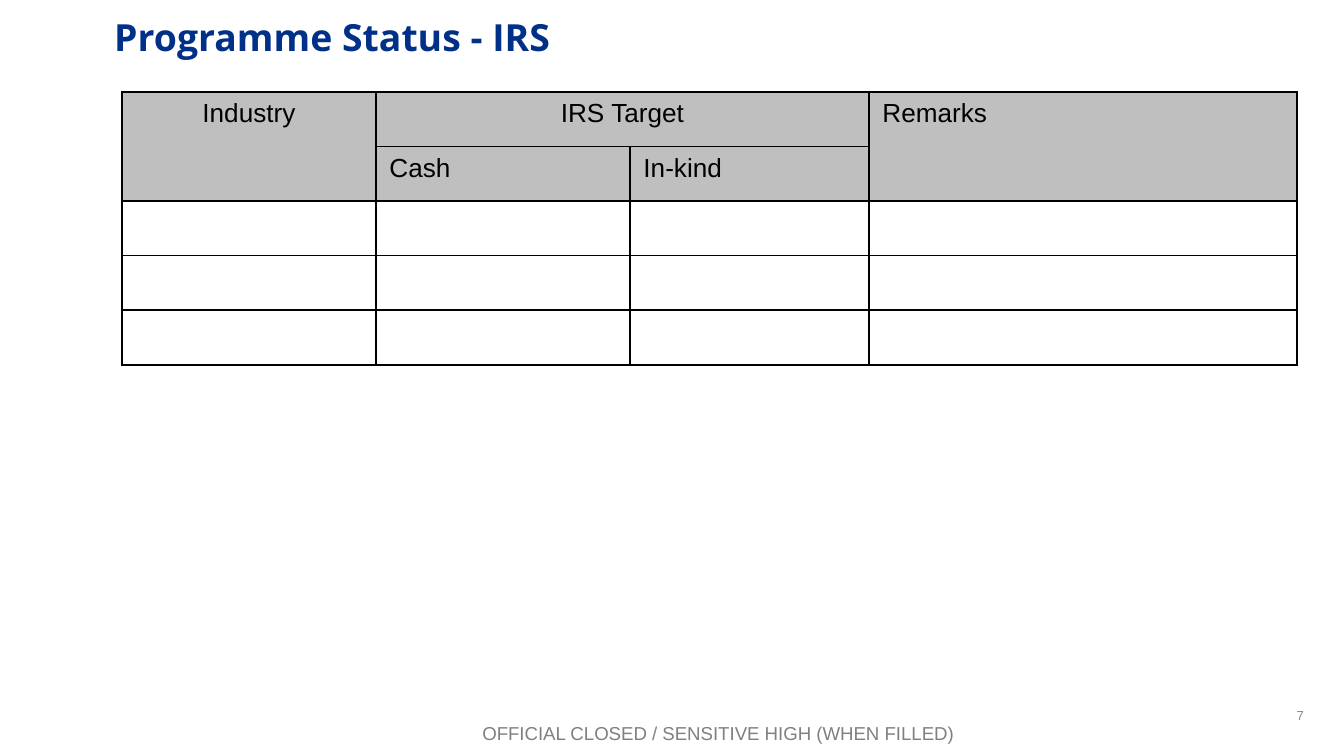
from dataclasses import dataclass

from lxml import etree
from pptx import Presentation
from pptx.dml.color import RGBColor
from pptx.enum.text import MSO_ANCHOR, PP_ALIGN
from pptx.oxml.ns import qn
from pptx.util import Emu, Pt

LEFT, CENTER, RIGHT = PP_ALIGN.LEFT, PP_ALIGN.CENTER, PP_ALIGN.RIGHT
TOP, MIDDLE = MSO_ANCHOR.TOP, MSO_ANCHOR.MIDDLE


@dataclass(frozen=True)
class Theme:
    heading_font: str = "Open Sans"
    body_font: str = "Arial"
    navy: str = "003087"
    black: str = "000000"
    header_fill: str = "BFBFBF"
    footer_gray: str = "808080"
    number_gray: str = "8C8C8C"
    title_size: int = 20
    table_size: int = 14
    footer_size: int = 10
    number_size: int = 7
    border_width: int = 1


THEME = Theme()

# Content: text, box in px, font, size, colour, bold, alignment, anchor
LABELS = [
    ("7", (1004, 695, 313, 40), THEME.body_font, THEME.number_size,
     THEME.number_gray, False, RIGHT, MIDDLE),
    ("OFFICIAL CLOSED / SENSITIVE HIGH (WHEN FILLED)", (91, 715, 1254, 36),
     THEME.body_font, THEME.footer_size, THEME.footer_gray, False, CENTER, TOP),
    ("Programme Status - IRS", (101, 8, 1164, 106), THEME.heading_font,
     THEME.title_size, THEME.navy, True, LEFT, TOP),
]
# Header cells: row, column, rows spanned, columns spanned, text, alignment
HEADERS = [
    (0, 0, 2, 1, "Industry", CENTER),
    (0, 1, 1, 2, "IRS Target", CENTER),
    (0, 3, 2, 1, "Remarks", LEFT),
    (1, 1, 1, 1, "Cash", LEFT),
    (1, 2, 1, 1, "In-kind", LEFT),
]
HEADER_ROWS, ENTRY_ROWS = 2, 3
COLUMN_WIDTHS = [254, 254, 239, 428]
TABLE_LEFT, TABLE_TOP, TABLE_HEIGHT = 122, 92, 273
SLIDE_SIZE = (1344, 756)


def px(length):
    return Emu(round(length * 914400 / 134.4))


def style(paragraph, font, size, color, bold=False, align=LEFT):
    paragraph.alignment = align
    paragraph.font.name = font
    paragraph.font.size = Pt(size)
    paragraph.font.bold = bold
    paragraph.font.color.rgb = RGBColor.from_string(color)


def add_label(slide, text, box, font, size, color, bold, align, anchor):
    frame = slide.shapes.add_textbox(*map(px, box)).text_frame
    frame.word_wrap = True
    frame.vertical_anchor = anchor
    frame.text = text
    style(frame.paragraphs[0], font, size, color, bold, align)


def add_borders(cell):
    properties = cell._tc.get_or_add_tcPr()
    for side in ("lnL", "lnR", "lnT", "lnB"):
        line = etree.SubElement(properties, qn(f"a:{side}"),
                                w=str(Pt(THEME.border_width)))
        fill = etree.SubElement(line, qn("a:solidFill"))
        etree.SubElement(fill, qn("a:srgbClr"), val=THEME.black)


def add_status_table(slide):
    row_count = HEADER_ROWS + ENTRY_ROWS
    table = slide.shapes.add_table(
        row_count, len(COLUMN_WIDTHS), px(TABLE_LEFT), px(TABLE_TOP),
        px(sum(COLUMN_WIDTHS)), px(TABLE_HEIGHT)).table
    table.first_row = False
    table.horz_banding = False
    for column, width in zip(table.columns, COLUMN_WIDTHS):
        column.width = px(width)

    # Grid
    for row_index, row in enumerate(table.rows):
        row.height = px(TABLE_HEIGHT / row_count)
        for cell in row.cells:
            add_borders(cell)
            if row_index < HEADER_ROWS:
                cell.fill.solid()
                cell.fill.fore_color.rgb = RGBColor.from_string(THEME.header_fill)
            else:
                cell.fill.background()

    # Header labels
    for row, column, row_span, column_span, text, align in HEADERS:
        cell = table.cell(row, column)
        if row_span * column_span > 1:
            cell.merge(table.cell(row + row_span - 1, column + column_span - 1))
        cell.text = text
        style(cell.text_frame.paragraphs[0], THEME.body_font,
              THEME.table_size, THEME.black, align=align)


def main():
    deck = Presentation()
    deck.slide_width, deck.slide_height = map(px, SLIDE_SIZE)
    slide = deck.slides.add_slide(deck.slide_layouts[6])
    for label in LABELS:
        add_label(slide, *label)
    add_status_table(slide)
    deck.save("out.pptx")


if __name__ == "__main__":
    main()
